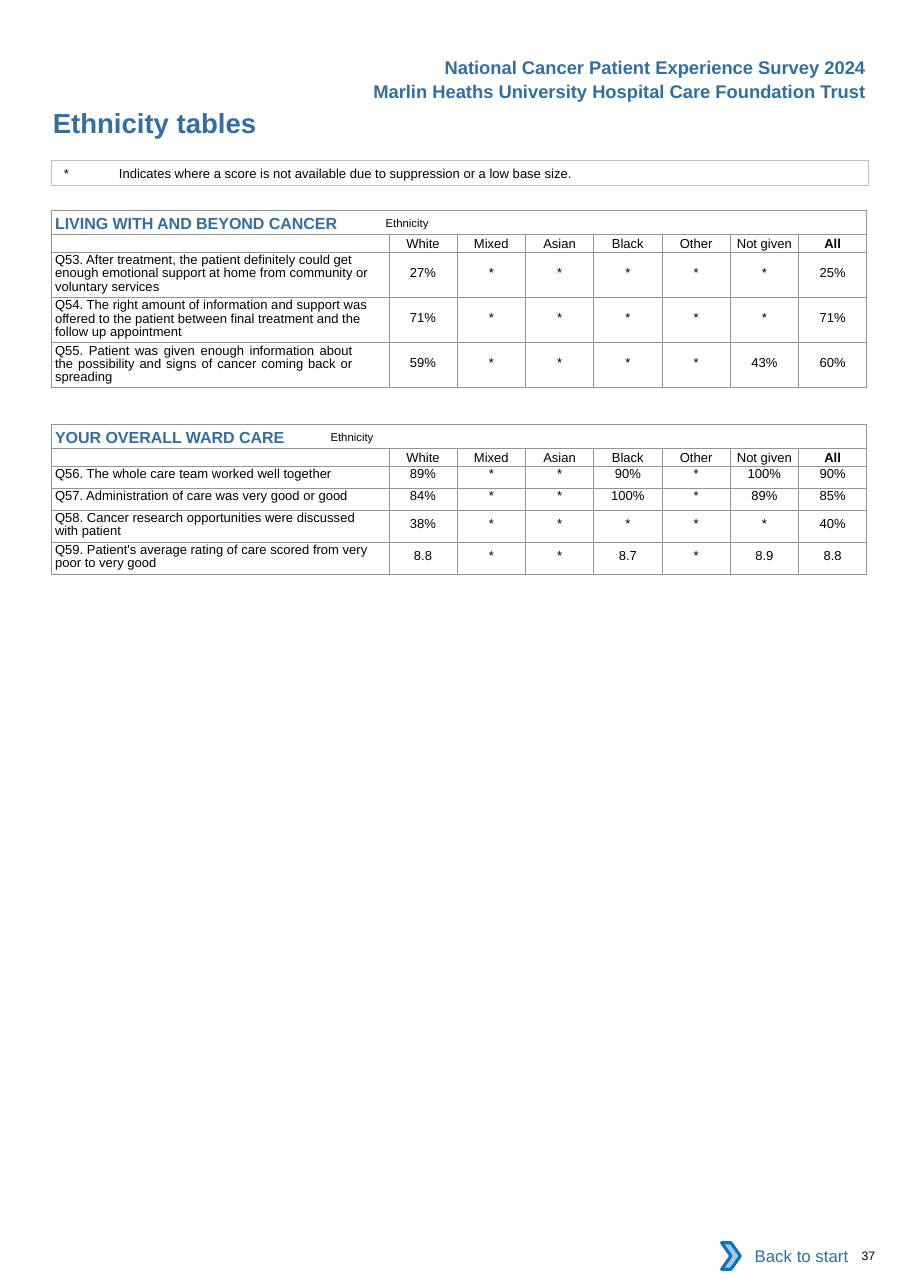
from lxml import etree
from pptx import Presentation
from pptx.dml.color import RGBColor
from pptx.enum.shapes import MSO_SHAPE
from pptx.enum.text import MSO_ANCHOR, MSO_AUTO_SIZE, PP_ALIGN
from pptx.oxml.ns import qn
from pptx.util import Inches, Pt

LEFT, RIGHT, CENTER, JUSTIFY = PP_ALIGN.LEFT, PP_ALIGN.RIGHT, PP_ALIGN.CENTER, PP_ALIGN.JUSTIFY
TOP, MIDDLE = MSO_ANCHOR.TOP, MSO_ANCHOR.MIDDLE
GROW = MSO_AUTO_SIZE.SHAPE_TO_FIT_TEXT
RECTANGLE, CHEVRON = MSO_SHAPE.RECTANGLE, MSO_SHAPE.CHEVRON
BLUE, BLACK, GRID = "336E9F", "000000", "939598"
TITLE_ONLY = 5


def rgb(value):
    return RGBColor.from_string(value)


def write(paragraph, text, size=8.5, color=BLACK, bold=False, align=LEFT,
          indent=0, line=None, tab=None, baseline=None):
    paragraph.alignment = align
    if line:
        paragraph.line_spacing = Pt(line)
    properties = paragraph._p.get_or_add_pPr()
    if indent:
        properties.set("marL", str(Inches(indent)))
        properties.set("indent", "0")
    if tab:
        stops = etree.SubElement(properties, qn("a:tabLst"))
        etree.SubElement(stops, qn("a:tab"), pos=str(Inches(tab)), algn="l")
    run = paragraph.add_run()
    run.text = text
    run.font.name = "Arial"
    run.font.size = Pt(size)
    run.font.bold = bold
    run.font.color.rgb = rgb(color)
    if baseline:
        run.font._element.set("baseline", str(baseline))


prs = Presentation()
prs.slide_width, prs.slide_height = Inches(8.26), Inches(11.69)
slide = prs.slides.add_slide(prs.slide_layouts[TITLE_ONLY])

page_number = slide.shapes.add_textbox(Inches(7.72), Inches(11.33), Inches(0.51), Inches(0.13))
heading = slide.shapes.title
heading.left, heading.top, heading.width, heading.height = map(Inches, (0.47, 0.96, 4.5, 0.3))
for holder, text, style in (
    (page_number, "37", dict(size=8, indent=0.1)),
    (heading, "Ethnicity tables", dict(size=18, color=BLUE, bold=True, indent=0.01)),
):
    frame = holder.text_frame
    frame.margin_left = frame.margin_right = frame.margin_top = frame.margin_bottom = 0
    frame.vertical_anchor = TOP
    frame.word_wrap = True
    frame.auto_size = GROW
    write(frame.paragraphs[0], text, **style)

groups = ["White", "Mixed", "Asian", "Black", "Other", "Not given", "All"]
sections = [
    ("LIVING WITH AND BEYOND CANCER", 1.91, [
        ("Q53. After treatment, the patient definitely could get enough emotional support "
         "at home from community or voluntary services", "27% * * * * * 25%", 0.41, LEFT),
        ("Q54. The right amount of information and support was offered to the patient "
         "between final treatment and the follow up appointment", "71% * * * * * 71%", 0.41, LEFT),
        ("Q55. Patient was given enough information about the possibility and signs of "
         "cancer coming back or spreading", "59% * * * * 43% 60%", 0.41, JUSTIFY),
    ]),
    ("YOUR OVERALL WARD CARE", 3.85, [
        ("Q56. The whole care team worked well together", "89% * * 90% * 100% 90%", 0.2, LEFT),
        ("Q57. Administration of care was very good or good", "84% * * 100% * 89% 85%", 0.2, LEFT),
        ("Q58. Cancer research opportunities were discussed with patient",
         "38% * * * * * 40%", 0.29, LEFT),
        ("Q59. Patient's average rating of care scored from very poor to very good",
         "8.8 * * 8.7 * 8.9 8.8", 0.29, LEFT),
    ]),
]
score_insets = {0.41: 0.12, 0.2: 0.01, 0.29: 0.06}

for section, top, questions in sections:
    heights = [0.22, 0.16] + [question[2] for question in questions]
    table = slide.shapes.add_table(len(heights), 8, Inches(0.47), Inches(top),
                                   Inches(7.41), Inches(sum(heights))).table
    table.first_row = table.horz_banding = False
    for column, width in zip(table.columns, [3.06] + [0.62] * 7):
        column.width = Inches(width)
    for row, height in zip(table.rows, heights):
        row.height = Inches(height)
    for cell in table.iter_cells():
        cell.margin_left = cell.margin_right = cell.margin_top = cell.margin_bottom = 0
        cell.fill.background()
        for position, side in enumerate(("lnL", "lnR", "lnT", "lnB")):
            border = etree.Element(qn("a:" + side), w=str(Pt(0.5)))
            fill = etree.SubElement(border, qn("a:solidFill"))
            etree.SubElement(fill, qn("a:srgbClr"), val=GRID)
            cell._tc.get_or_add_tcPr().insert(position, border)

    title_cell = table.cell(0, 0)
    title_cell.merge(table.cell(0, 7))
    title_cell.vertical_anchor = MIDDLE
    title_line = title_cell.text_frame.paragraphs[0]
    write(title_line, section + "\t", size=10.5, color=BLUE, bold=True, indent=0.03, tab=4.92)
    write(title_line, "Ethnicity", size=12.8, indent=0.03, baseline=10000)

    for column, group in enumerate(groups, 1):
        cell = table.cell(1, column)
        cell.vertical_anchor = MIDDLE
        write(cell.text_frame.paragraphs[0], group, bold=group == "All", align=CENTER, line=9.9)

    for row, (question, scores, height, align) in enumerate(questions, 2):
        cell = table.cell(row, 0)
        wraps = height > 0.2
        cell.margin_top = Inches(0.02 if wraps else 0.01)
        cell.margin_right = Inches(0.33 if align == JUSTIFY else 0.15)
        write(cell.text_frame.paragraphs[0], question, align=align, indent=0.03,
              line=8.6 if wraps else None)
        for column, score in enumerate(scores.split(), 1):
            cell = table.cell(row, column)
            cell.margin_top = Inches(score_insets[height])
            write(cell.text_frame.paragraphs[0], score, align=CENTER)

    for cell in table.iter_cells():
        if not cell.text:
            etree.SubElement(cell.text_frame.paragraphs[0]._p, qn("a:endParaRPr"), sz="850")

note = slide.shapes.add_shape(RECTANGLE, Inches(0.47), Inches(1.46), Inches(7.41), Inches(0.22))
note.shadow.inherit = False
note.fill.background()
note.line.color.rgb = rgb("BFBFBF")
note.line.width = Pt(0.5)
frame = note.text_frame
frame.margin_left = frame.margin_right = 0
frame.margin_top = frame.margin_bottom = Inches(0.04)
frame.vertical_anchor = TOP
write(frame.paragraphs[0],
      "*\tIndicates where a score is not available due to suppression or a low base size.",
      indent=0.11, tab=0.34)

for text, top in (("Marlin Heaths University Hospital Care Foundation Trust", 0.68),
                  ("National Cancer Patient Experience Survey 2024", 0.46)):
    banner = slide.shapes.add_textbox(Inches(2.96), Inches(top), Inches(5), Inches(0.3))
    banner.text_frame.word_wrap = True
    write(banner.text_frame.paragraphs[0], text, size=12, color=BLUE, bold=True, align=RIGHT)

back_link = slide.shapes.add_group_shape()
back_label = back_link.shapes.add_shape(RECTANGLE, Inches(6.62), Inches(11.19),
                                        Inches(1.18), Inches(0.42))
back_label.shadow.inherit = False
back_label.fill.solid()
back_label.fill.fore_color.rgb = rgb("FFFFFF")
back_label.line.fill.background()
back_label.text_frame.vertical_anchor = MIDDLE
write(back_label.text_frame.paragraphs[0], "Back to start", size=11, color=BLUE, align=RIGHT)

back_arrow = back_link.shapes.add_shape(CHEVRON, Inches(6.55), Inches(11.28),
                                        Inches(0.17), Inches(0.24))
back_arrow.shadow.inherit = False
back_arrow.fill.solid()
back_arrow.fill.fore_color.rgb = rgb("A8C7E9")
back_arrow.line.color.rgb = rgb("0A74BB")
back_arrow.line.width = Pt(2)

prs.save("out.pptx")
